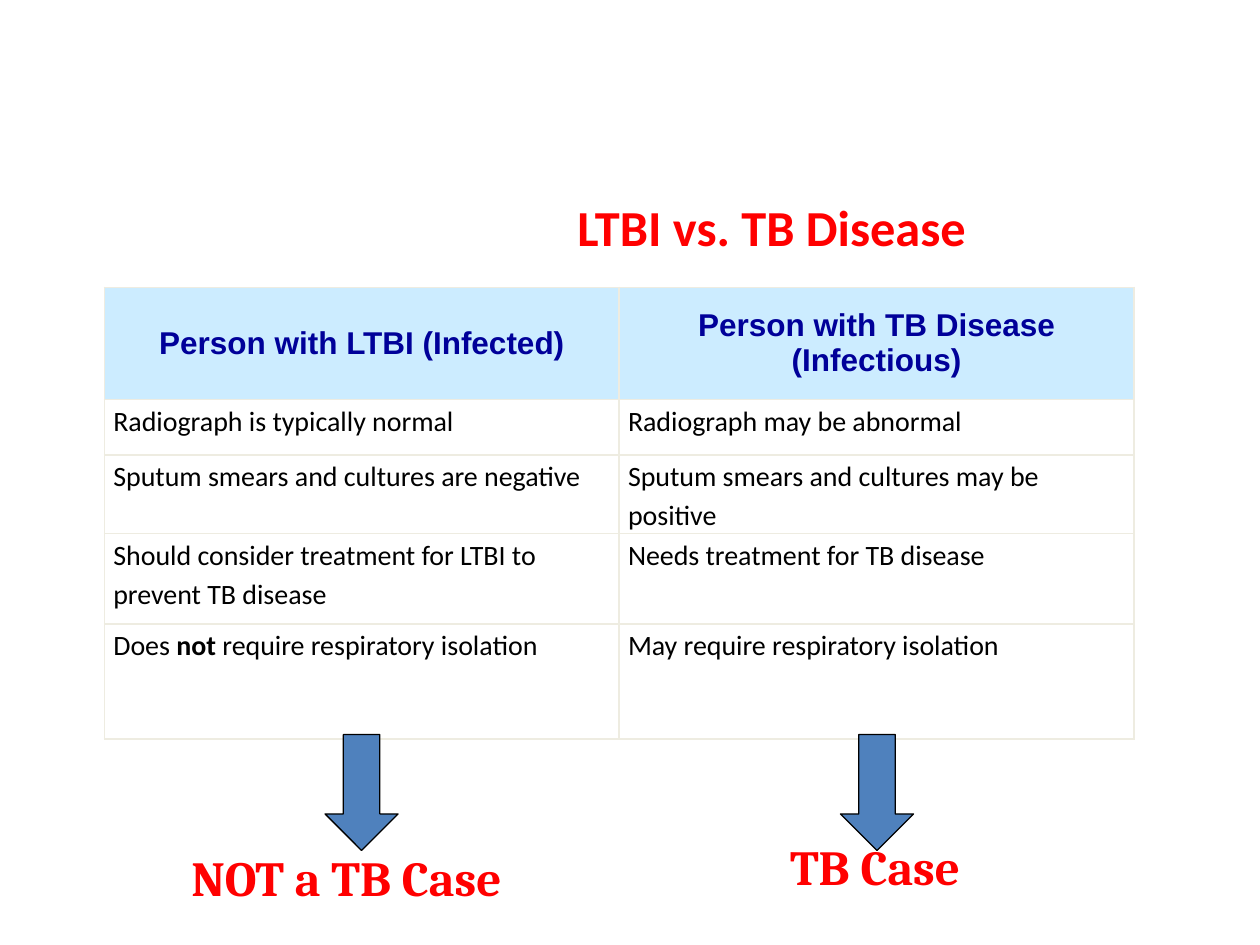
from lxml.etree import SubElement
from pptx import Presentation
from pptx.dml.color import RGBColor
from pptx.enum.shapes import MSO_SHAPE
from pptx.enum.text import MSO_ANCHOR, MSO_AUTO_SIZE, PP_ALIGN
from pptx.oxml.ns import qn
from pptx.util import Inches, Pt

COLORS = {
    "red": "FF0000",
    "navy": "000099",
    "black": "000000",
    "header": "CCECFF",
    "border": "EEECE1",
    "arrow": "4F81BD",
}
ROW_HEIGHTS = [0.89, 0.44, 0.62, 0.72, 0.91]
ROWS = [
    ("Person with LTBI (Infected)", "Person with TB Disease (Infectious)"),
    ("Radiograph is typically normal", "Radiograph may be abnormal"),
    ("Sputum smears and cultures are negative",
     "Sputum smears and cultures may be positive"),
    ("Should consider treatment for LTBI to prevent TB disease",
     "Needs treatment for TB disease"),
    (("Does ", "not", " require respiratory isolation"),
     "May require respiratory isolation"),
]


def rgb(name):
    return RGBColor.from_string(COLORS[name])


def set_font(p, name, size, color, bold=None):
    p.font.name = name
    p.font.size = Pt(size)
    p.font.color.rgb = rgb(color)
    p.font.bold = bold


def add_title(s, text):
    title = s.shapes.title
    title.left, title.top = Inches(3), Inches(1.67)
    title.width, title.height = Inches(6.25), Inches(0.42)
    tf = title.text_frame
    tf.text = text
    tf.word_wrap = True
    tf.auto_size = MSO_AUTO_SIZE.NONE
    tf.vertical_anchor = MSO_ANCHOR.BOTTOM
    p = tf.paragraphs[0]
    p.alignment = PP_ALIGN.CENTER
    p.line_spacing = Pt(30)
    set_font(p, "Calibri", 28.8, "red", True)


def set_borders(cell):
    tc_pr = cell._tc.get_or_add_tcPr()
    for side in ("lnL", "lnR", "lnT", "lnB"):
        ln = SubElement(tc_pr, qn(f"a:{side}"), w=str(Pt(1)))
        fill = SubElement(ln, qn("a:solidFill"))
        SubElement(fill, qn("a:srgbClr"), val=COLORS["border"])


def fill_cell(cell, content, is_header):
    cell.margin_left = cell.margin_right = Inches(0.07)
    cell.margin_top = cell.margin_bottom = 0
    set_borders(cell)
    p = cell.text_frame.paragraphs[0]
    parts = (content,) if isinstance(content, str) else content
    for i, part in enumerate(parts):
        r = p.add_run()
        r.text = part
        if i == 1:
            r.font.bold = True
    if is_header:
        cell.vertical_anchor = MSO_ANCHOR.MIDDLE
        cell.fill.solid()
        cell.fill.fore_color.rgb = rgb("header")
        p.alignment = PP_ALIGN.CENTER
        set_font(p, "Arial", 18, "navy", True)
    else:
        cell.fill.background()
        p.line_spacing = 1.15
        set_font(p, "Calibri", 16, "black", False)


def add_comparison(s):
    table = s.shapes.add_table(
        len(ROWS), 2, Inches(0.83), Inches(2.28),
        Inches(8.17), Inches(sum(ROW_HEIGHTS))).table
    table.first_row = table.horz_banding = False
    for i, (height, contents) in enumerate(zip(ROW_HEIGHTS, ROWS)):
        table.rows[i].height = Inches(height)
        for j, content in enumerate(contents):
            fill_cell(table.cell(i, j), content, i == 0)


def add_arrow(s, left):
    arrow = s.shapes.add_shape(
        MSO_SHAPE.DOWN_ARROW, Inches(left), Inches(5.83),
        Inches(0.58), Inches(0.92))
    arrow.shadow.inherit = False
    arrow.fill.solid()
    arrow.fill.fore_color.rgb = rgb("arrow")
    arrow.line.color.rgb = rgb("black")
    arrow.line.width = Pt(0.75)


def add_verdict(s, text, left, top, inset):
    box = s.shapes.add_textbox(
        Inches(left), Inches(top), Inches(2.92), Inches(0.57))
    tf = box.text_frame
    tf.word_wrap = True
    tf.auto_size = MSO_AUTO_SIZE.SHAPE_TO_FIT_TEXT
    tf.margin_left = Inches(inset)
    tf.text = text
    set_font(tf.paragraphs[0], "Cambria", 28, "red", True)


def main():
    prs = Presentation()
    prs.slide_width, prs.slide_height = Inches(10), Inches(7.5)
    s = prs.slides.add_slide(prs.slide_layouts[5])
    add_title(s, "LTBI vs. TB Disease")
    add_comparison(s)
    for left in (2.58, 6.67):
        add_arrow(s, left)
    add_verdict(s, "NOT a TB Case", 1.42, 6.68, 0.1)
    add_verdict(s, "TB Case", 6, 6.59, 0.27)
    prs.save("out.pptx")


if __name__ == "__main__":
    main()
